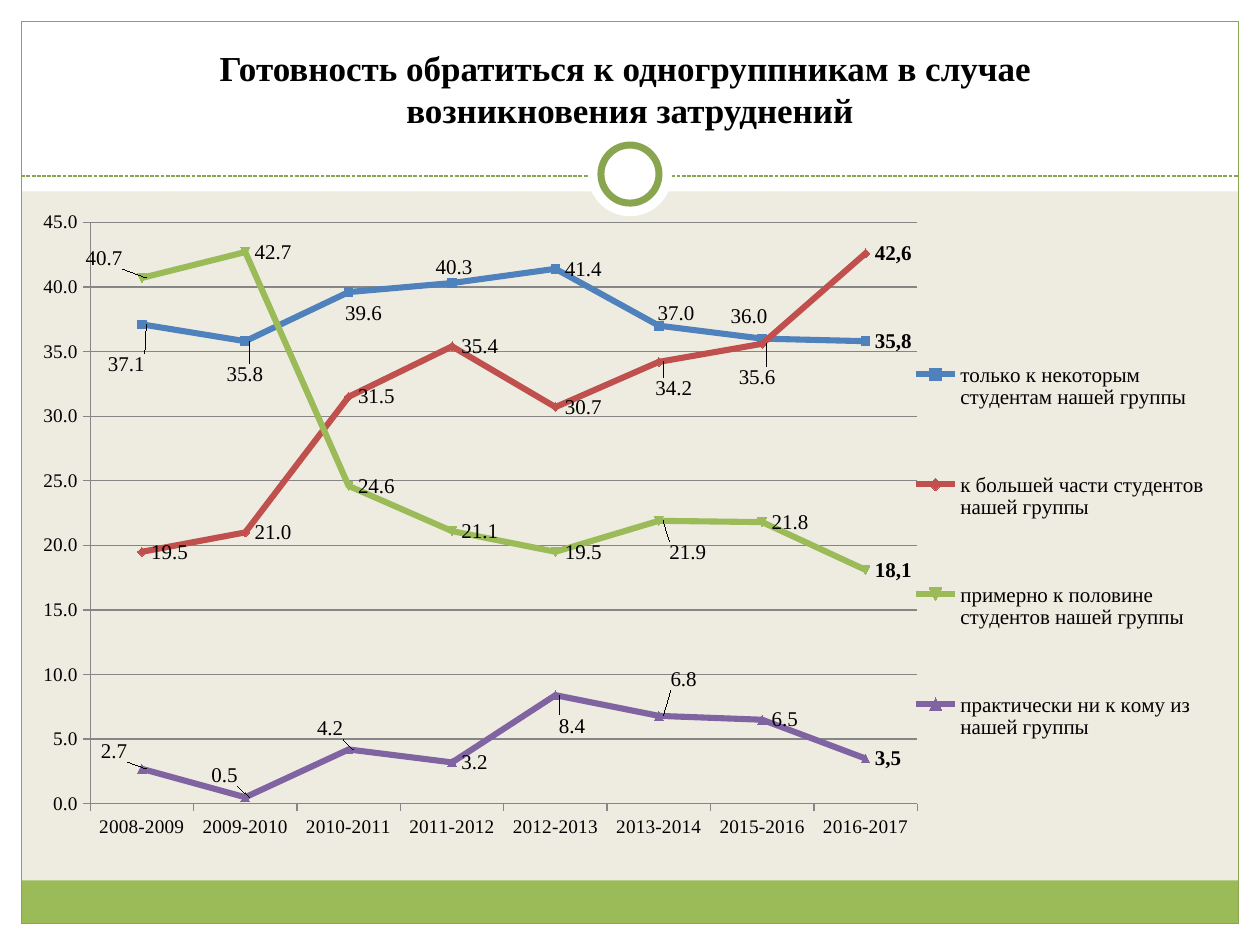
from dataclasses import dataclass

from lxml.etree import SubElement
from pptx import Presentation
from pptx.chart.data import CategoryChartData
from pptx.dml.color import RGBColor
from pptx.enum.chart import XL_CHART_TYPE, XL_LABEL_POSITION, XL_LEGEND_POSITION, XL_TICK_MARK
from pptx.enum.dml import MSO_LINE
from pptx.enum.shapes import MSO_CONNECTOR, MSO_SHAPE
from pptx.enum.text import MSO_ANCHOR, PP_ALIGN
from pptx.oxml import parse_xml
from pptx.oxml.ns import nsdecls, qn
from pptx.util import Cm, Pt


@dataclass(frozen=True)
class Theme:
    font: str = "Times New Roman"
    text: str = "000000"
    paper: str = "EEECE1"
    white: str = "FFFFFF"
    band: str = "9BBB59"
    rule: str = "89A54F"
    grid: str = "868686"
    title_size: int = 20
    label_size: int = 12
    axis_size: int = 11
    thin: float = 0.75
    ring: float = 4
    curve: float = 3.5


@dataclass(frozen=True)
class Box:
    left: float
    top: float
    width: float
    height: float

    def lengths(self):
        return [Cm(value) for value in (self.left, self.top, self.width, self.height)]


@dataclass(frozen=True)
class Curve:
    name: str
    values: tuple
    color: str
    last_label: str
    shifts: dict


THEME = Theme()
TITLE = "Готовность обратиться к одногруппникам в случае \nвозникновения затруднений"
YEARS = ["2008-2009", "2009-2010", "2010-2011", "2011-2012",
         "2012-2013", "2013-2014", "2015-2016", "2016-2017"]
CURVES = [
    Curve("только к некоторым студентам нашей группы",
          (37.1, 35.8, 39.6, 40.3, 41.4, 37.0, 36.0, 35.8), "4F81BD", "35,8",
          {0: (-3.7, 6), 1: (-2.4, 5), 2: (-1.1, 3.2), 3: (-2.2, -2.4),
           5: (-0.9, -1.8), 6: (-3.5, -3.4)}),
    Curve("к большей части студентов нашей группы",
          (19.5, 21.0, 31.5, 35.4, 30.7, 34.2, 35.6, 42.6), "C0504D", "42,6",
          {5: (-1.1, 4), 6: (-2.8, 5)}),
    Curve("примерно к половине студентов нашей группы",
          (40.7, 42.7, 24.6, 21.1, 19.5, 21.9, 21.8, 18.1), "9BBB59", "18,1",
          {0: (-5.6, -3), 5: (0.1, 4.7)}),
    Curve("практически ни к кому из нашей группы",
          (2.7, 0.5, 4.2, 3.2, 8.4, 6.8, 6.5, 3.5), "8064A2", "3,5",
          {0: (-4.3, -2.7), 1: (-3.7, -3.3), 2: (-3.5, -3.1),
           4: (-0.5, 4.6), 5: (0.2, -5.4)}),
]


def color(value):
    return RGBColor.from_string(value)


def style_font(font, size, bold=False):
    font.name = THEME.font
    font.size = Pt(size)
    font.bold = bold
    font.color.rgb = color(THEME.text)


def write_text(frame, text, size, bold=False, align=PP_ALIGN.CENTER):
    para = frame.paragraphs[0]
    para.alignment = align
    for index, line in enumerate(text.split("\n")):
        if index:
            para.add_line_break()
        span = para.add_run()
        span.text = line
        style_font(span.font, size, bold)


def add_panel(page, box, fill=None, line=None, width=THEME.thin, kind=MSO_SHAPE.RECTANGLE):
    shape = page.shapes.add_shape(kind, *box.lengths())
    shape.shadow.inherit = False
    if fill:
        shape.fill.solid()
        shape.fill.fore_color.rgb = color(fill)
    else:
        shape.fill.background()
    if line:
        shape.line.color.rgb = color(line)
        shape.line.width = Pt(width)
    else:
        shape.line.fill.background()


def add_frame(page, box, margin, header, footer):
    right = box.left + box.width - margin
    bottom = box.top + box.height - margin
    inner = Box(box.left + margin, box.top + margin,
                box.width - 2 * margin, box.height - 2 * margin)
    for edge in (Box(box.left, bottom, box.width, margin),
                 Box(box.left, box.top, box.width, header),
                 Box(box.left, box.top, margin, box.height),
                 Box(right, box.top, margin, box.height)):
        add_panel(page, edge, fill=THEME.white)
    add_panel(page, Box(inner.left, bottom - footer, inner.width, footer), fill=THEME.band)
    add_panel(page, inner, line=THEME.rule)


def add_divider(page, box):
    middle = box.top + box.height / 2
    line = page.shapes.add_connector(MSO_CONNECTOR.STRAIGHT, Cm(box.left), Cm(middle),
                                     Cm(box.left + box.width), Cm(middle))
    line.line.color.rgb = color(THEME.rule)
    line.line.width = Pt(THEME.thin)
    line.line.dash_style = MSO_LINE.SQUARE_DOT
    SubElement(line._element.spPr, qn("a:effectLst"))
    center = box.left + box.width / 2
    top = middle - 0.04
    for size, outline in ((box.height, None), (1.17, THEME.rule)):
        add_panel(page, Box(center - size / 2, top - size / 2, size, size), fill=THEME.white,
                  line=outline, width=THEME.ring, kind=MSO_SHAPE.OVAL)


def place_title(page, box, text):
    title = page.shapes.title
    title.left, title.top, title.width, title.height = box.lengths()
    title.text_frame.word_wrap = True
    title.text_frame.vertical_anchor = MSO_ANCHOR.BOTTOM
    write_text(title.text_frame, text, THEME.title_size, bold=True)
    page.shapes._spTree.append(title._element)


def manual_layout(target="", **percents):
    inner = f'<c:layoutTarget val="{target}"/>' if target else ""
    if target or "w" in percents:
        inner += '<c:xMode val="edge"/><c:yMode val="edge"/>'
    inner += "".join(f'<c:{key} val="{value / 100:.3f}"/>' for key, value in percents.items())
    return parse_xml(f'<c:layout {nsdecls("c")}><c:manualLayout>{inner}'
                     "</c:manualLayout></c:layout>")


def label_curve(series, curve):
    labels = series.data_labels
    labels.show_value = True
    labels.number_format = "0.0"
    labels.number_format_is_linked = False
    labels.position = XL_LABEL_POSITION.RIGHT
    style_font(labels.font, THEME.label_size)
    for index, (across, down) in curve.shifts.items():
        label = series.points[index].data_label
        style_font(label.font, THEME.label_size)
        label.position = XL_LABEL_POSITION.RIGHT
        node = labels._element.xpath(f'c:dLbl[c:idx/@val="{index}"]')[0]
        node.insert(1, manual_layout(x=across, y=down))
        node.insert(2, parse_xml(f'<c:numFmt {nsdecls("c")} formatCode="0.0" sourceLinked="0"/>'))
    last = series.points[len(curve.values) - 1].data_label
    write_text(last.text_frame, curve.last_label, THEME.label_size, bold=True)
    last.position = XL_LABEL_POSITION.RIGHT


def style_axis(axis):
    style_font(axis.tick_labels.font, THEME.axis_size)
    axis.major_tick_mark = XL_TICK_MARK.OUTSIDE
    axis.minor_tick_mark = XL_TICK_MARK.NONE
    axis.format.line.color.rgb = color(THEME.grid)


def add_line_chart(page, box):
    data = CategoryChartData(number_format="0.0")
    data.categories = YEARS
    for curve in CURVES:
        data.add_series(curve.name, curve.values)
    chart = page.shapes.add_chart(XL_CHART_TYPE.LINE_MARKERS, *box.lengths(), data).chart
    style_font(chart.font, 10)
    chart.has_title = False
    plot = chart.plots[0]
    plot.vary_by_categories = False
    for series, curve in zip(plot.series, CURVES):
        series.smooth = False
        series.format.line.color.rgb = color(curve.color)
        series.format.line.width = Pt(THEME.curve)
        series.marker.size = 5
        series.marker.format.fill.solid()
        series.marker.format.fill.fore_color.rgb = color(curve.color)
        series.marker.format.line.color.rgb = color(curve.color)
        label_curve(series, curve)
    for axis in (chart.category_axis, chart.value_axis):
        style_axis(axis)
    scale = chart.value_axis
    scale.minimum_scale, scale.maximum_scale, scale.major_unit = 0, 45, 5
    scale.tick_labels.number_format = "0.0"
    scale.tick_labels.number_format_is_linked = False
    scale.major_gridlines.format.line.color.rgb = color(THEME.grid)
    chart.has_legend = True
    chart.legend.position = XL_LEGEND_POSITION.RIGHT
    chart.legend.include_in_layout = False
    style_font(chart.legend.font, THEME.label_size)
    areas = ((chart._chartSpace.chart.plotArea, manual_layout("inner", x=4.1, y=1.8, w=70.6, h=86.9)),
             (chart.legend._element, manual_layout(x=74.1, y=13.2, w=25.5, h=75.5)))
    for area, layout in areas:
        for old in area.findall(qn("c:layout")):
            area.remove(old)
        area.insert(0 if area.tag == qn("c:plotArea") else 1, layout)


def main():
    deck = Presentation()
    deck.slide_width, deck.slide_height = Cm(25.4), Cm(19.05)
    page = deck.slides.add_slide(deck.slide_layouts[5])
    page.background.fill.solid()
    page.background.fill.fore_color.rgb = color(THEME.paper)
    add_frame(page, Box(0, 0, 25.4, 19.05), margin=0.43, header=3.86, footer=0.87)
    add_divider(page, Box(0.43, 2.7, 24.54, 1.7))
    place_title(page, Box(0.85, 0.64, 23.7, 2.11), TITLE)
    add_line_chart(page, Box(0.85, 4.24, 23.62, 13.49))
    deck.save("out.pptx")


if __name__ == "__main__":
    main()
